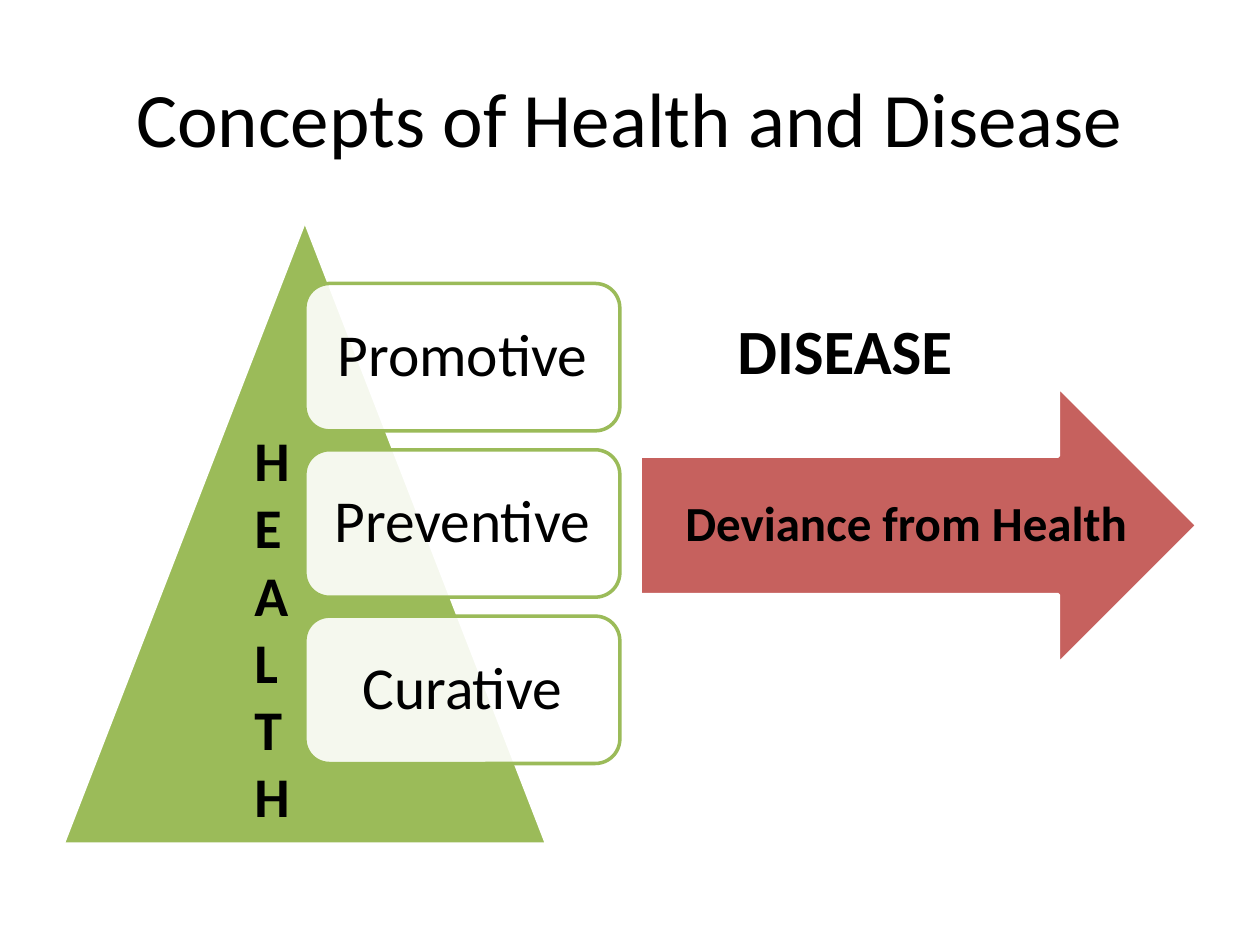
from pptx import Presentation
from pptx.dml.color import RGBColor
from pptx.enum.shapes import MSO_SHAPE
from pptx.enum.text import MSO_ANCHOR, MSO_AUTO_SIZE, PP_ALIGN
from pptx.oxml.ns import qn
from pptx.util import Inches, Pt
from lxml.etree import SubElement

BLACK = RGBColor(0x00, 0x00, 0x00)
WHITE = RGBColor(0xFF, 0xFF, 0xFF)
GREEN = RGBColor(0x9B, 0xBB, 0x59)
RED = RGBColor(0xC0, 0x50, 0x4D)


def add_block(kind, left, top, width, height, fill, line, opacity=100):
    shape = slide.shapes.add_shape(
        kind, Inches(left), Inches(top), Inches(width), Inches(height))
    shape.shadow.inherit = False
    shape.fill.solid()
    shape.fill.fore_color.rgb = fill
    shape.line.color.rgb = line
    shape.line.width = Pt(2)
    if opacity < 100:
        color = shape.fill._xPr.find(qn("a:solidFill"))[0]
        SubElement(color, qn("a:alpha")).set("val", str(opacity * 1000))
    return shape


def write(paragraph, text, size, bold=False, alignment=PP_ALIGN.CENTER):
    paragraph.alignment = alignment
    run = paragraph.add_run()
    run.text = text
    run.font.name = "Calibri"
    run.font.size = Pt(size)
    run.font.bold = bold
    run.font.color.rgb = BLACK


presentation = Presentation()
presentation.slide_width = Inches(10)
presentation.slide_height = Inches(7.5)
slide = presentation.slides.add_slide(presentation.slide_layouts[5])

title = slide.shapes.title
title.left, title.top = Inches(0.5), Inches(0.3)
title.width, title.height = Inches(9), Inches(1.25)
title.text_frame.vertical_anchor = MSO_ANCHOR.MIDDLE
write(title.text_frame.paragraphs[0], "Concepts of Health and Disease", 44)

add_block(MSO_SHAPE.ISOSCELES_TRIANGLE, 0.5, 1.75, 3.84, 4.95, GREEN, WHITE)

for index, level in enumerate(["Promotive", "Preventive", "Curative"]):
    card = add_block(MSO_SHAPE.ROUNDED_RECTANGLE, 2.42, 2.25 + index * 1.32,
                     2.5, 1.17, WHITE, GREEN, 90)
    frame = card.text_frame
    frame.vertical_anchor = MSO_ANCHOR.MIDDLE
    frame.margin_left = frame.margin_right = Inches(0.14)
    frame.margin_top = frame.margin_bottom = Inches(0.14)
    frame.paragraphs[0].line_spacing = 0.9
    write(frame.paragraphs[0], level, 34)

arrow = add_block(MSO_SHAPE.RIGHT_ARROW, 5.08, 3.07, 4.42, 2.2, RED, WHITE, 90)
frame = arrow.text_frame
frame.word_wrap = False
frame.vertical_anchor = MSO_ANCHOR.MIDDLE
frame.margin_left, frame.margin_right = Inches(0.36), Inches(0)
frame.paragraphs[0].line_spacing = 0.9
write(frame.paragraphs[0], "Deviance from Health", 28, True, PP_ALIGN.LEFT)

health = slide.shapes.add_textbox(
    Inches(1.92), Inches(3.33), Inches(0.36), Inches(3.33))
frame = health.text_frame
frame.word_wrap = True
frame.auto_size = MSO_AUTO_SIZE.SHAPE_TO_FIT_TEXT
for index, letter in enumerate("HEALTH"):
    paragraph = frame.add_paragraph() if index else frame.paragraphs[0]
    write(paragraph, letter, 32, True, PP_ALIGN.LEFT)

disease = slide.shapes.add_textbox(
    Inches(5.58), Inches(2.42), Inches(2.25), Inches(0.71))
disease.text_frame.word_wrap = True
disease.text_frame.auto_size = MSO_AUTO_SIZE.SHAPE_TO_FIT_TEXT
write(disease.text_frame.paragraphs[0], "DISEASE", 36, True)

presentation.save("out.pptx")
